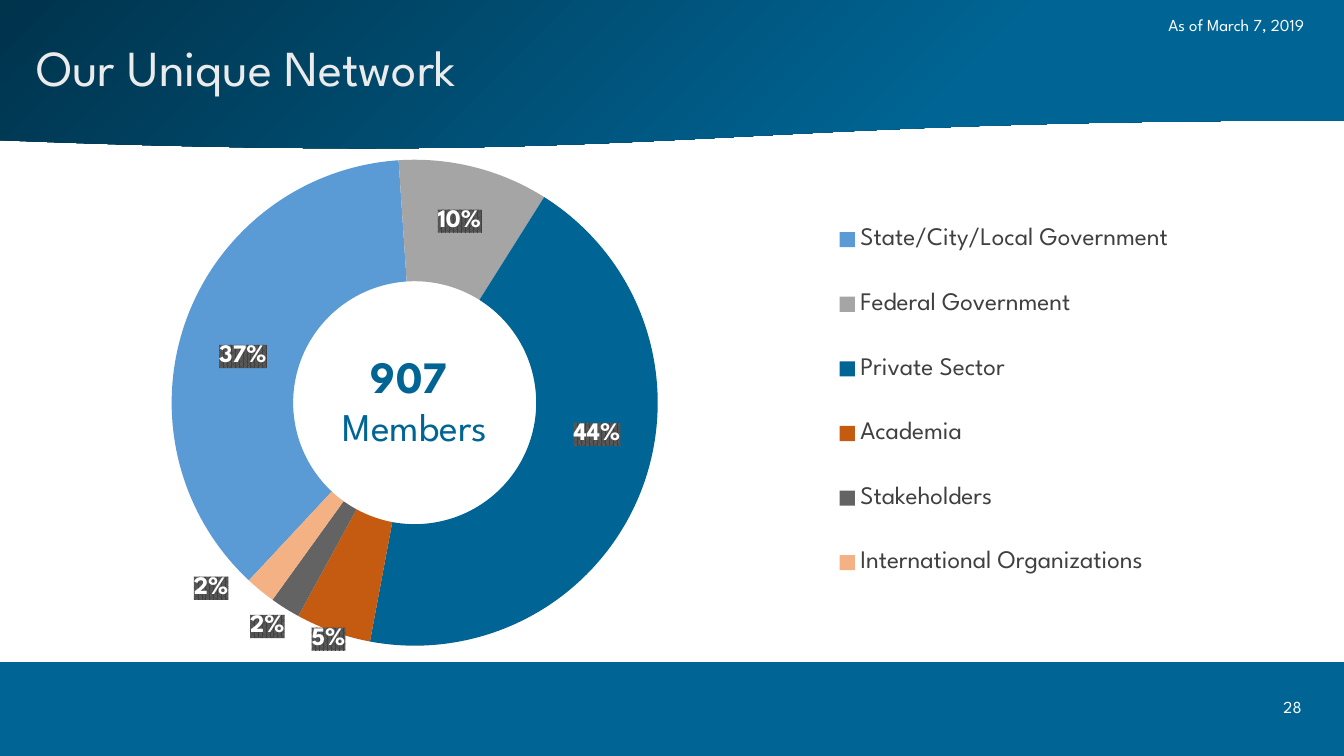
from copy import deepcopy
from dataclasses import dataclass

from pptx import Presentation
from pptx.chart.data import CategoryChartData as ChartData
from pptx.dml.color import RGBColor as RGB
from pptx.enum.chart import XL_CHART_TYPE as Chart, XL_LEGEND_POSITION as Place
from pptx.enum.shapes import MSO_SHAPE as Shape
from pptx.enum.text import MSO_ANCHOR as Anchor, MSO_AUTO_SIZE as Fit, PP_ALIGN as Align
from pptx.oxml import parse_xml
from pptx.oxml.ns import nsdecls
from pptx.util import Inches, Pt


@dataclass(frozen=True)
class Theme:
    font: str = "League Spartan"
    navy: str = "00334C"
    blue: str = "006595"
    white: str = "FFFFFF"
    pale: str = "EBEBEB"
    ink: str = "404040"
    black: str = "000000"
    hatch: str = "595959"
    title: int = 36
    total: int = 32
    noun: int = 28
    label: int = 18
    small: int = 12
    base: int = 10


# Category, percent, colour, label shift as a share of the chart's width and height
SECTORS = [
    ("State/City/Local Government", 37, "5B9BD5", (0, 0.03)),
    ("Federal Government", 10, "A5A5A5", (0, -0.01)),
    ("Private Sector", 44, "006595", (0.01, -0.07)),
    ("Academia", 5, "C55A11", (-0.02, 0.13)),
    ("Stakeholders", 2, "636363", (-0.04, 0.14)),
    ("International Organizations", 2, "F4B183", (-0.07, 0.09)),
]


def layout(x, y, size=None, inner=False):
    """Manual chart layout; without a size, x and y are a shift."""
    tags = [("layoutTarget", "inner")] if inner else []
    if size:
        tags += [("xMode", "edge"), ("yMode", "edge")]
    tags += [("x", x), ("y", y)]
    if size:
        tags += [("w", size[0]), ("h", size[1])]
    body = "".join(f'<c:{tag} val="{val}"/>' for tag, val in tags)
    return parse_xml(f'<c:layout {nsdecls("c")}><c:manualLayout>{body}'
                     '</c:manualLayout></c:layout>')


def drop(node, query):
    for old in node.xpath(query):
        node.remove(old)


class Deck:
    def __init__(self, theme):
        self.theme = theme
        self.file = Presentation()
        self.file.slide_width, self.file.slide_height = Inches(13.33), Inches(7.5)
        self.slide = self.file.slides.add_slide(self.file.slide_layouts[6])

    def style(self, font, size, color, bold=False):
        font.name, font.size, font.bold = self.theme.font, Pt(size), bold
        font.color.rgb = RGB.from_string(color)

    def band(self, kind, box, *colors):
        """Full-width band; a second colour makes a diagonal gradient."""
        band = self.slide.shapes.add_shape(kind, *map(Inches, box))
        band.shadow.inherit = False
        band.line.fill.background()
        if len(colors) == 1:
            band.fill.solid()
            band.fill.fore_color.rgb = RGB.from_string(colors[0])
            return
        band.fill.gradient()
        band.fill.gradient_angle = 315
        for stop, color, place in zip(band.fill.gradient_stops, colors, (0, 0.71)):
            stop.color.rgb, stop.position = RGB.from_string(color), place

    def text(self, box, lines, align=Align.LEFT, anchor=Anchor.TOP, fit=Fit.NONE):
        """Each line is (words, size, colour, bold)."""
        frame = self.slide.shapes.add_textbox(*map(Inches, box)).text_frame
        frame.word_wrap, frame.auto_size = True, fit
        frame.vertical_anchor = anchor
        for i, (words, *look) in enumerate(lines):
            para = frame.add_paragraph() if i else frame.paragraphs[0]
            para.alignment = align
            run = para.add_run()
            run.text = words
            self.style(run.font, *look)

    def ring(self, box, name, rows, start):
        data = ChartData()
        data.categories = [row[0] for row in rows]
        data.add_series(name, [row[1] for row in rows])
        chart = self.slide.shapes.add_chart(
            Chart.DOUGHNUT, *map(Inches, box), data).chart
        self.style(chart.font, self.theme.base, self.theme.black)
        chart.has_title = False
        chart.has_legend = True
        key = chart.legend
        key.position, key.include_in_layout = Place.RIGHT, False
        self.style(key.font, self.theme.label, self.theme.ink)
        drop(key._element, "c:layout")
        key._element.xpath("c:legendPos")[0].addnext(
            layout(0.634, 0.055, (0.29, 0.862)))

        plot = chart.plots[0]
        area = plot._element.getparent()
        drop(area, "c:layout")
        area.insert(0, layout(0.072, 0.001, (0.475, 0.976), True))
        for tag, val in (("firstSliceAng", start), ("holeSize", 50)):
            plot._element.xpath(f"c:{tag}")[0].set("val", str(val))
        part = plot.series[0]
        for i, row in enumerate(rows):
            fill = part.points[i].format.fill
            fill.solid()
            fill.fore_color.rgb = RGB.from_string(row[2])
        self.labels(part.data_labels, [row[3] for row in rows])

    def labels(self, marks, shifts):
        """Percent labels on a hatched ground, each moved by its shift."""
        marks.show_value, marks.show_percentage = False, True
        self.style(marks.font, self.theme.label, self.theme.white, True)
        root = marks._element
        for line in root.xpath("c:showLeaderLines"):
            line.set("val", "0")
        ground = parse_xml(
            f'<c:spPr {nsdecls("c", "a")}><a:pattFill prst="pct75">'
            f'<a:fgClr><a:srgbClr val="{self.theme.ink}"/></a:fgClr>'
            f'<a:bgClr><a:srgbClr val="{self.theme.hatch}"/></a:bgClr>'
            '</a:pattFill><a:ln><a:noFill/></a:ln></c:spPr>')
        prose = root.xpath("c:txPr")[0]
        prose.addprevious(ground)
        flags = "".join(
            f'<c:show{flag} val="{int(flag == "Percent")}"/>' for flag in
            ("LegendKey", "Val", "CatName", "SerName", "Percent", "BubbleSize"))
        for i, shift in enumerate(shifts):
            mark = parse_xml(f'<c:dLbl {nsdecls("c")}><c:idx val="{i}"/>{flags}</c:dLbl>')
            for j, node in enumerate((layout(*shift), deepcopy(ground), deepcopy(prose))):
                mark.insert(j + 1, node)
            root.insert(i, mark)


def main():
    look = Theme()
    deck = Deck(look)
    deck.band(Shape.FLOWCHART_DOCUMENT, (0, 0, 13.33, 1.49), look.navy, look.blue)
    deck.band(Shape.RECTANGLE, (0, 6.57, 13.33, 0.93), look.blue)
    deck.text((0.26, 0.27, 9.58, 0.77),
              [("Our Unique Network", look.title, look.pale)], anchor=Anchor.MIDDLE)
    deck.text((12.56, 6.86, 0.52, 0.44),
              [("28", look.small, look.white)], Align.CENTER)
    deck.ring((0.26, 1.58, 12.45, 4.94), "Series 1", SECTORS, 223)
    deck.text((3.01, 3.41, 2.21, 1.11),
              [("907 ", look.total, look.blue, True),
               ("Members", look.noun, look.blue)], Align.CENTER, fit=Fit.SHAPE_TO_FIT_TEXT)
    deck.text((11.49, 0.1, 2.06, 0.3),
              [("As of March 7, 2019", look.small, look.white)], fit=Fit.SHAPE_TO_FIT_TEXT)
    deck.file.save("out.pptx")


if __name__ == "__main__":
    main()
